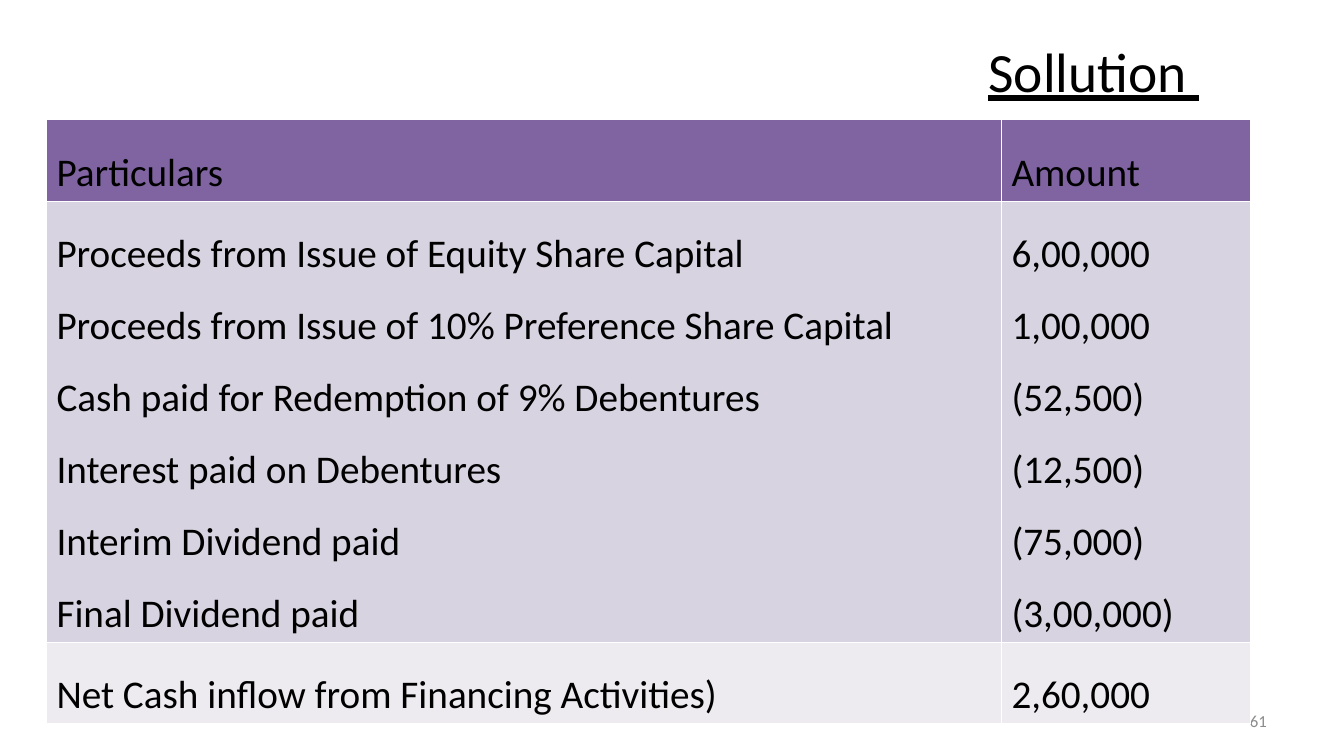
from lxml import etree
from pptx import Presentation
from pptx.dml.color import RGBColor
from pptx.enum import text as t
from pptx.oxml import ns
from pptx.util import Cm, Pt

COLORS = {
    "text": "000000",
    "number": "8C8C8C",
    "border": "FFFFFF",
    "header": "8064A2",
    "items": "D8D3E0",
    "total": "EDEAF0",
}
FONT = "Calibri"

# Each row: fill, height in cm, lines of each cell
ROWS = [
    ("header", 2.06, ["Particulars"], ["Amount"]),
    ("items", 11.1,
     ["Proceeds from Issue of Equity Share Capital",
      "Proceeds from Issue of 10% Preference Share Capital",
      "Cash paid for Redemption of 9% Debentures",
      "Interest paid on Debentures",
      "Interim Dividend paid",
      "Final Dividend paid"],
     ["6,00,000", "1,00,000", "(52,500)", "(12,500)", "(75,000)", "(3,00,000)"]),
    ("total", 2.06, ["Net Cash inflow from Financing Activities)"], ["2,60,000"]),
]
AMOUNT_SHARE = 0.207


def add_text(tf, lines, size, color="text", align=t.PP_ALIGN.LEFT,
             spacing=1.0, underline=None):
    """Fill a text frame with one paragraph per line."""
    for i, line in enumerate(lines):
        p = tf.add_paragraph() if i else tf.paragraphs[0]
        p.alignment = align
        p.line_spacing = spacing
        r = p.add_run()
        r.text = line
        r.font.name = FONT
        r.font.size = Pt(size)
        r.font.bold = False
        r.font.underline = underline
        r.font.color.rgb = RGBColor.from_string(COLORS[color])


def add_label(s, box, label, size, **fmt):
    """Right-aligned, vertically centred text box."""
    tf = s.shapes.add_textbox(*map(Cm, box)).text_frame
    tf.word_wrap = True
    tf.vertical_anchor = t.MSO_ANCHOR.MIDDLE
    add_text(tf, [label], size, align=t.PP_ALIGN.RIGHT, **fmt)


def set_borders(cell, color, width):
    tc_pr = cell._tc.get_or_add_tcPr()
    for i, side in enumerate(("lnL", "lnR", "lnT", "lnB")):
        ln = etree.Element(ns.qn(f"a:{side}"), w=str(Pt(width)))
        fill = etree.SubElement(ln, ns.qn("a:solidFill"))
        etree.SubElement(fill, ns.qn("a:srgbClr"), val=COLORS[color])
        tc_pr.insert(i, ln)


def add_cash_table(s, left, top, width):
    height = sum(row[1] for row in ROWS)
    table = s.shapes.add_table(len(ROWS), 2, Cm(left), Cm(top),
                               Cm(width), Cm(height)).table
    table.columns[0].width = Cm(width * (1 - AMOUNT_SHARE))
    table.columns[1].width = Cm(width * AMOUNT_SHARE)
    for i, (fill, row_height, *cells) in enumerate(ROWS):
        table.rows[i].height = Cm(row_height)
        for j, lines in enumerate(cells):
            cell = table.cell(i, j)
            cell.fill.solid()
            cell.fill.fore_color.rgb = RGBColor.from_string(COLORS[fill])
            set_borders(cell, "border", 1)
            add_text(cell.text_frame, lines, 28, spacing=1.5)


def build_solution_slide(prs):
    s = prs.slides.add_slide(prs.slide_layouts[6])
    # Title
    add_label(s, (3.12, 0.91, 27.36, 1.73), "Sollution ", 39.6, underline=True)
    # Slide number, partly behind the table
    add_label(s, (24.28, 17.65, 7.9, 1.02), "61", 12, color="number")
    # Cash flow from financing activities
    add_cash_table(s, 1.17, 3.02, 30.35)


def main():
    prs = Presentation()
    prs.slide_width, prs.slide_height = Cm(33.87), Cm(19.05)
    build_solution_slide(prs)
    prs.save("out.pptx")


if __name__ == "__main__":
    main()
